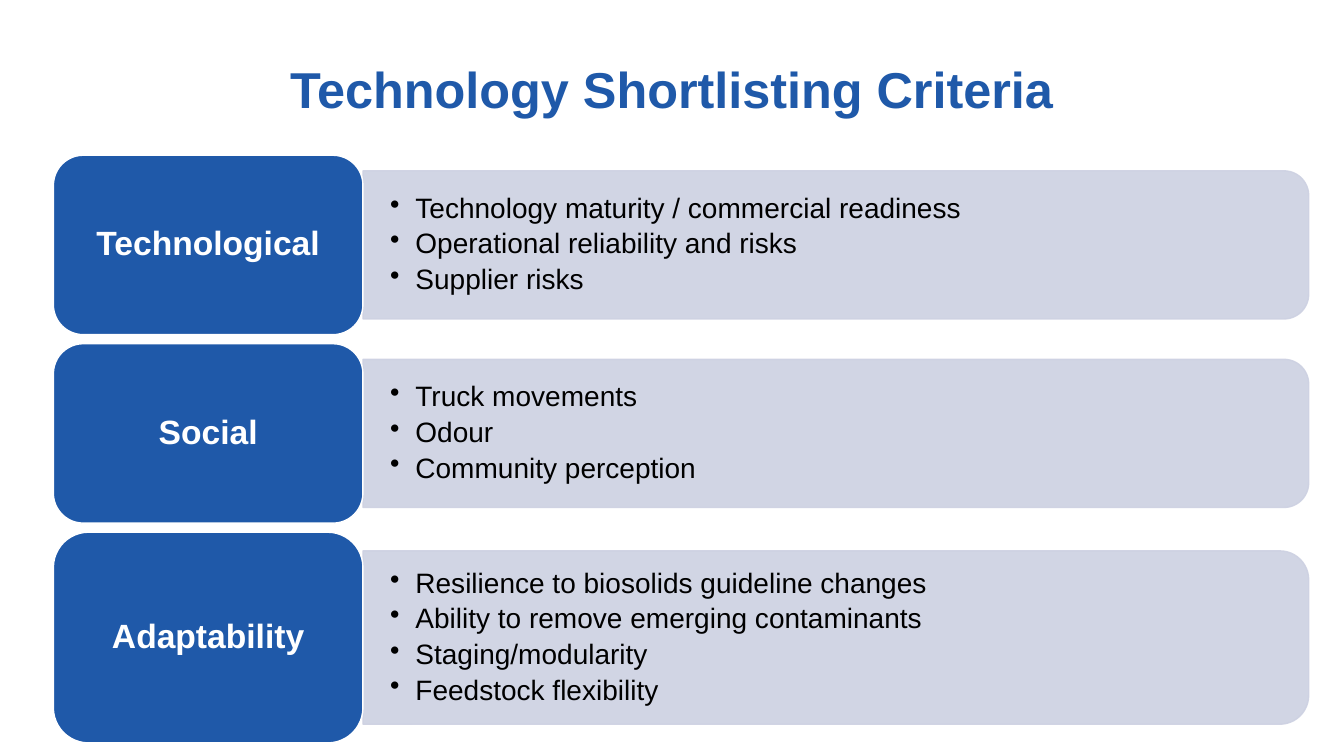
from dataclasses import dataclass

from lxml import etree
from pptx import Presentation
from pptx.dml.color import RGBColor
from pptx.enum.shapes import MSO_SHAPE
from pptx.enum.text import MSO_ANCHOR, PP_ALIGN
from pptx.oxml.ns import qn
from pptx.util import Pt

ROUND_RECT = MSO_SHAPE.ROUNDED_RECTANGLE
ROUND_TOP = MSO_SHAPE.ROUND_2_SAME_RECTANGLE
MIDDLE = MSO_ANCHOR.MIDDLE
CENTER = PP_ALIGN.CENTER
EMU_PER_PX = 9144


@dataclass(frozen=True)
class Theme:
    """Colours and type sizes of the deck."""
    font: str = "Arial"
    blue: str = "1F59A9"
    panel: str = "CDD1E2"
    white: str = "FFFFFF"
    black: str = "000000"
    panel_opacity: int = 90
    title_size: int = 36
    label_size: int = 24
    item_size: int = 20


@dataclass(frozen=True)
class Box:
    """A rectangle in px."""
    left: int
    top: int
    width: int
    height: int

    def emu(self):
        """Return left, top, width and height in EMU."""
        return [round(side * EMU_PER_PX) for side in
                (self.left, self.top, self.width, self.height)]


THEME = Theme()
LABEL_WIDTH = 307
PANEL_SHARE = 0.825
ROW_GAP = 9
CRITERIA = [
    ("Technological", 178, ["Technology maturity / commercial readiness",
                            "Operational reliability and risks",
                            "Supplier risks"]),
    ("Social", 178, ["Truck movements", "Odour", "Community perception"]),
    ("Adaptability", 209, ["Resilience to biosolids guideline changes",
                           "Ability to remove emerging contaminants",
                           "Staging/modularity",
                           "Feedstock flexibility"]),
]


def style_font(para, size, color, bold=False):
    """Set the font of a whole paragraph."""
    para.font.name = THEME.font
    para.font.size = Pt(size)
    para.font.bold = bold
    para.font.color.rgb = RGBColor.from_string(color)


def add_filled_shape(slide, kind, box, fill, line):
    """Add a preset shape with a solid fill and a thin outline."""
    shape = slide.shapes.add_shape(kind, *box.emu())
    shape.shadow.inherit = False
    shape.fill.solid()
    shape.fill.fore_color.rgb = RGBColor.from_string(fill)
    shape.line.color.rgb = RGBColor.from_string(line)
    shape.line.width = Pt(1)
    return shape


def add_bullet(para, indent):
    """Give a paragraph a hanging round bullet."""
    properties = para._p.get_or_add_pPr()
    properties.set("marL", str(indent * EMU_PER_PX))
    properties.set("indent", str(-indent * EMU_PER_PX))
    etree.SubElement(properties, qn("a:buChar"), char="•")


def add_title(slide, box, text):
    """Place the centred slide title."""
    frame = slide.shapes.add_textbox(*box.emu()).text_frame
    frame.word_wrap = True
    para = frame.paragraphs[0]
    para.text = text
    para.alignment = CENTER
    style_font(para, THEME.title_size, THEME.blue, bold=True)


def add_panel(slide, box):
    """Place a translucent panel whose right corners are rounded."""
    upright = Box(box.left + (box.width - box.height) / 2,
                  box.top + (box.height - box.width) / 2,
                  box.height, box.width)
    panel = add_filled_shape(slide, ROUND_TOP, upright, THEME.panel, THEME.panel)
    panel.rotation = 90
    for color in panel._element.spPr.iter(qn("a:srgbClr")):
        etree.SubElement(color, qn("a:alpha"), val=str(THEME.panel_opacity * 1000))


def add_items(slide, box, items):
    """Place the bulleted criteria over a panel."""
    frame = slide.shapes.add_textbox(*box.emu()).text_frame
    frame.word_wrap = True
    frame.vertical_anchor = MIDDLE
    frame.margin_left = frame.margin_right = 27 * EMU_PER_PX
    frame.margin_top = frame.margin_bottom = 14 * EMU_PER_PX
    for index, item in enumerate(items):
        para = frame.add_paragraph() if index else frame.paragraphs[0]
        para.text = item
        para.line_spacing = 0.9
        para.space_after = Pt(3.8)
        add_bullet(para, 25)
        style_font(para, THEME.item_size, THEME.black)


def add_label(slide, box, text):
    """Place the rounded block that names a group of criteria."""
    label = add_filled_shape(slide, ROUND_RECT, box, THEME.blue, THEME.white)
    frame = label.text_frame
    frame.word_wrap = True
    frame.vertical_anchor = MIDDLE
    para = frame.paragraphs[0]
    para.text = text
    para.alignment = CENTER
    para.line_spacing = 0.9
    style_font(para, THEME.label_size, THEME.white, bold=True)


def add_row(slide, box, name, items):
    """Place one group: its panel, criteria and label."""
    panel_height = round(box.height * PANEL_SHARE)
    panel = Box(box.left + LABEL_WIDTH, box.top + (box.height - panel_height) / 2,
                box.width - LABEL_WIDTH, panel_height)
    add_panel(slide, panel)
    add_items(slide, panel, items)
    add_label(slide, Box(box.left, box.top, LABEL_WIDTH, box.height), name)


def add_criteria_slide(deck):
    """Build the slide with a title and stacked groups of criteria."""
    slide = deck.slides.add_slide(deck.slide_layouts[6])
    top = 154
    for name, height, items in CRITERIA:
        add_row(slide, Box(53, top, 1245, height), name, items)
        top += height + ROW_GAP
    add_title(slide, Box(248, 53, 837, 71), "Technology Shortlisting Criteria")


def main():
    """Create the deck and save it."""
    deck = Presentation()
    deck.slide_width = 1333 * EMU_PER_PX
    deck.slide_height = 750 * EMU_PER_PX
    add_criteria_slide(deck)
    deck.save("out.pptx")


if __name__ == "__main__":
    main()
